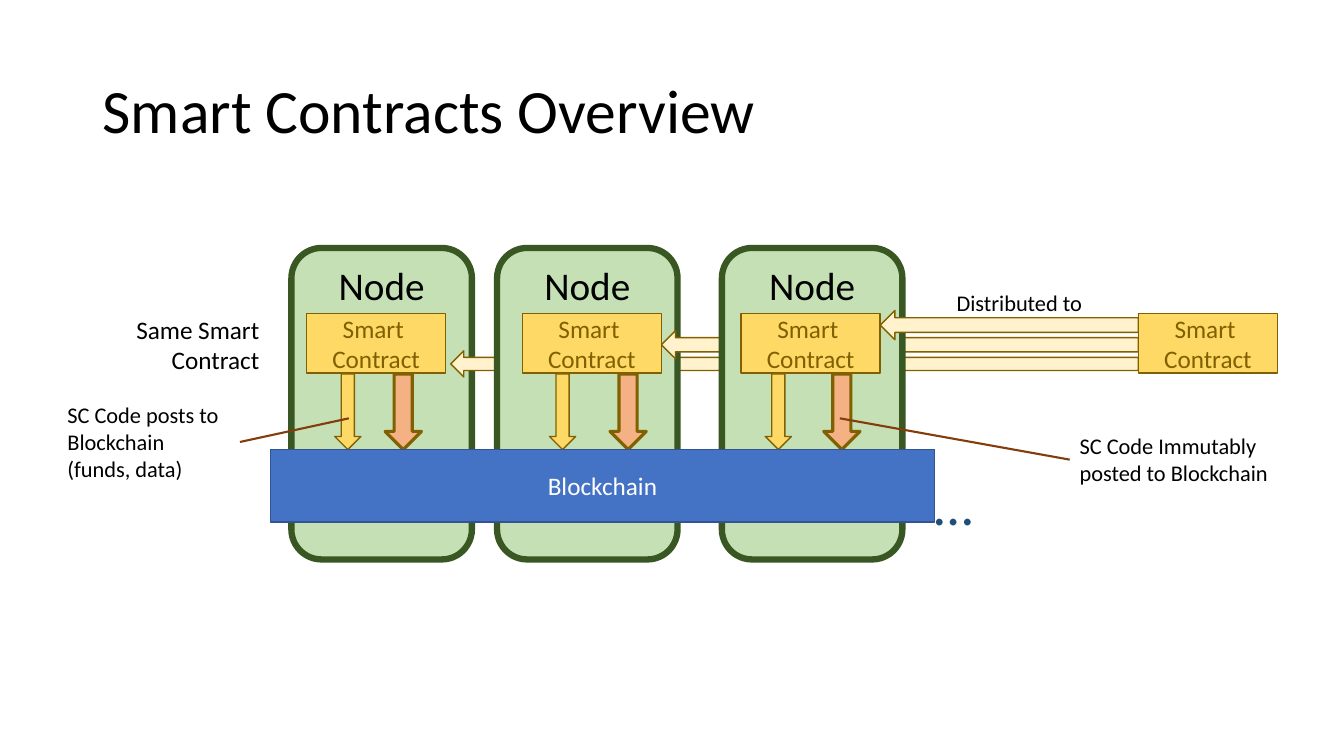
from lxml.etree import SubElement
from pptx import Presentation
from pptx.dml.color import RGBColor
from pptx.enum.shapes import MSO_CONNECTOR as Connector, MSO_SHAPE as Shape
from pptx.enum.text import MSO_ANCHOR as Anchor, MSO_AUTO_SIZE as AutoSize, PP_ALIGN as Align
from pptx.oxml.ns import qn
from pptx.util import Inches, Pt

BLACK = RGBColor(0x00, 0x00, 0x00)
WHITE = RGBColor(0xFF, 0xFF, 0xFF)
GREEN = RGBColor(0xC5, 0xE0, 0xB4)
DARK_GREEN = RGBColor(0x38, 0x57, 0x23)
CREAM = RGBColor(0xFF, 0xF2, 0xCC)
GOLD = RGBColor(0xFF, 0xD9, 0x66)
DARK_GOLD = RGBColor(0x80, 0x60, 0x00)
ORANGE = RGBColor(0xF4, 0xB1, 0x83)
BROWN = RGBColor(0x84, 0x3C, 0x0B)
BLUE = RGBColor(0x44, 0x72, 0xC4)
MID_BLUE = RGBColor(0x32, 0x54, 0x91)
NAVY = RGBColor(0x1F, 0x4E, 0x79)

LEFT_SIDE, RIGHT_SIDE = 1, 3
CONTRACT_TOP, CONTRACT_WIDTH = 3.11, 1.38
SOURCE_LEFT = 11.29


class Diagram:
    font = "Calibri"

    def __init__(self, slide):
        self.shapes = slide.shapes

    def label(self, frame, text, size, color, align, anchor):
        frame.word_wrap = True
        frame.vertical_anchor = anchor
        frame.text = text
        for paragraph in frame.paragraphs:
            paragraph.alignment = align
            for run in paragraph.runs:
                run.font.name = self.font
                run.font.size = Pt(size)
                run.font.color.rgb = color

    def block(self, kind, box, fill, line, weight=1.0):
        block = self.shapes.add_shape(kind, *map(Inches, box))
        block.shadow.inherit = False
        block.fill.solid()
        block.fill.fore_color.rgb = fill
        block.line.color.rgb = line
        block.line.width = Pt(weight)
        return block

    def caption(self, box, text, size, color=BLACK, align=Align.LEFT):
        caption = self.shapes.add_textbox(*map(Inches, box))
        self.label(caption.text_frame, text, size, color, align, Anchor.TOP)
        caption.text_frame.auto_size = AutoSize.SHAPE_TO_FIT_TEXT
        return caption

    def title(self, box, text):
        title = self.shapes.add_textbox(*map(Inches, box))
        self.label(title.text_frame, text, 44, BLACK, Align.LEFT, Anchor.MIDDLE)
        title.text_frame.paragraphs[0].line_spacing = 0.9

    def node(self, left):
        node = self.block(Shape.ROUNDED_RECTANGLE, (left, 2.46, 1.79, 3.09),
                          GREEN, DARK_GREEN, 4.5)
        self.label(node.text_frame, "Node", 28, BLACK, Align.CENTER, Anchor.TOP)

    def contract(self, left):
        contract = self.block(Shape.RECTANGLE, (left, CONTRACT_TOP, CONTRACT_WIDTH, 0.59),
                              GOLD, DARK_GOLD)
        self.label(contract.text_frame, "Smart \nContract", 18, DARK_GOLD,
                   Align.CENTER, Anchor.MIDDLE)

    def distribution(self, tip, top, height):
        """Arrow from the source contract leftwards to the tip."""
        arrow = self.block(Shape.RIGHT_ARROW, (tip, top, SOURCE_LEFT - tip, height),
                           CREAM, DARK_GOLD)
        arrow.rotation = 180

    def posting(self, left, width, fill, weight):
        self.block(Shape.DOWN_ARROW, (left, 3.71, width, 0.75), fill, DARK_GOLD, weight)

    def pointer(self, caption, side, target):
        """Line from the middle of a caption's side to the target point."""
        x, y = map(Inches, target)
        pointer = self.shapes.add_connector(Connector.STRAIGHT, x, y, x, y)
        pointer.begin_connect(caption, side)
        pointer.line.color.rgb = BROWN
        pointer.line.width = Pt(1.5)
        SubElement(pointer._element.spPr, qn("a:effectLst"))


def main():
    deck = Presentation()
    deck.slide_width, deck.slide_height = Inches(13.33), Inches(7.5)
    diagram = Diagram(deck.slides.add_slide(deck.slide_layouts[6]))

    diagram.title((0.92, 0.4, 11.5, 1.45), "Smart Contracts Overview")

    # Each arrow passes behind the nodes to its right.
    diagram.node(2.89)
    diagram.distribution(4.47, 3.48, 0.26)
    diagram.node(4.93)
    diagram.distribution(6.56, 3.28, 0.28)
    diagram.node(7.16)
    diagram.distribution(8.73, 3.08, 0.29)

    for contract_left, data_left, code_left in (
        (3.04, 3.32, 3.82), (5.18, 5.45, 6.05), (7.35, 7.59, 8.17),
    ):
        diagram.contract(contract_left)
        diagram.posting(data_left, 0.26, GOLD, 1)
        diagram.posting(code_left, 0.36, ORANGE, 2.25)
    diagram.contract(SOURCE_LEFT)

    blockchain = diagram.block(Shape.RECTANGLE, (2.68, 4.46, 6.59, 0.72), BLUE, MID_BLUE)
    diagram.label(blockchain.text_frame, "Blockchain", 18, WHITE, Align.CENTER, Anchor.MIDDLE)

    diagram.caption((0.73, 3.07, 1.94, 0.71), "Same Smart Contract", 18, align=Align.RIGHT)
    diagram.caption((9.17, 4.61, 0.94, 0.77), "…", 40, NAVY)
    diagram.caption((9.23, 2.82, 1.76, 0.37), "Distributed to", 16, align=Align.CENTER)
    code_note = diagram.caption((10.61, 4.24, 2.23, 0.64),
                                "SC Code Immutably posted to Blockchain", 16)
    data_note = diagram.caption((0.57, 3.93, 1.81, 0.91),
                                "SC Code posts to Blockchain (funds, data)", 16)
    diagram.pointer(code_note, LEFT_SIDE, (8.33, 4.15))
    diagram.pointer(data_note, RIGHT_SIDE, (3.46, 4.15))

    deck.save("out.pptx")


if __name__ == "__main__":
    main()
